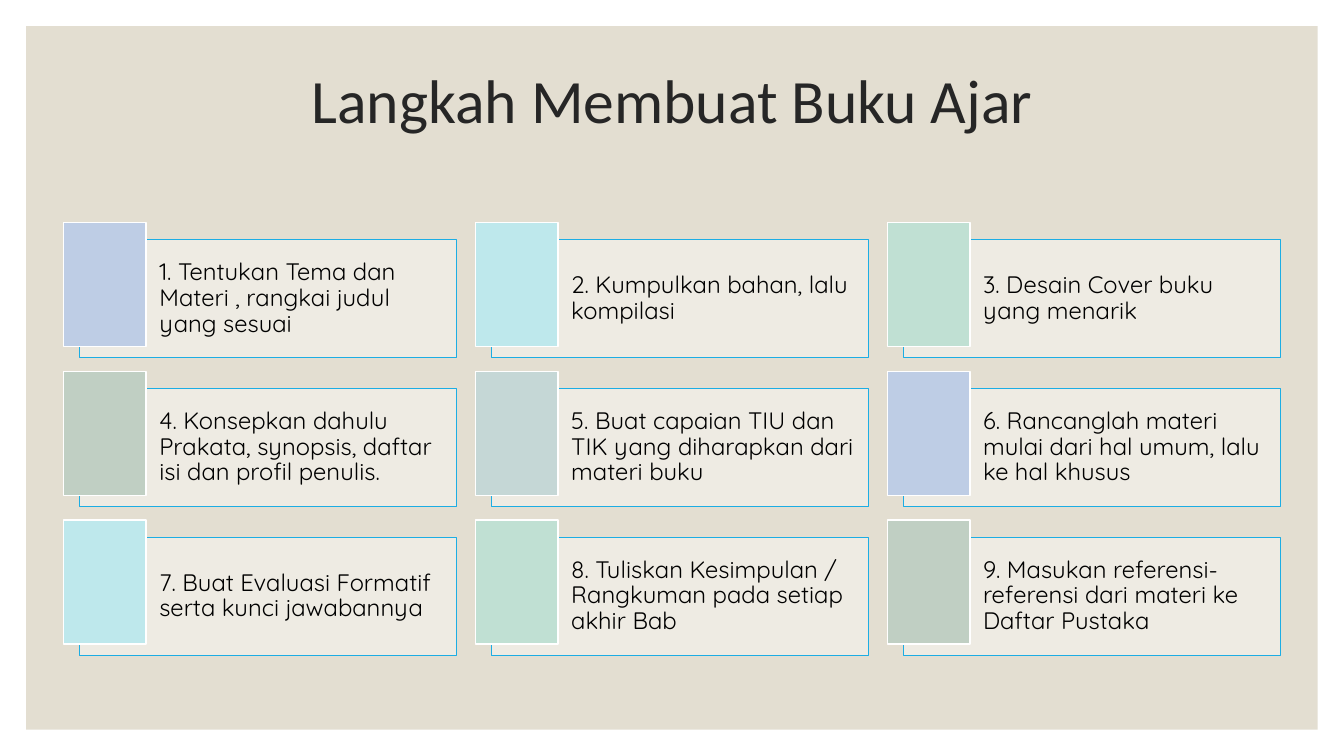
from lxml.etree import SubElement
from pptx import Presentation
from pptx.dml.color import RGBColor
from pptx.enum.shapes import MSO_SHAPE
from pptx.enum.text import MSO_ANCHOR, PP_ALIGN
from pptx.oxml.ns import qn
from pptx.util import Inches, Pt

TITLE = "Langkah Membuat Buku Ajar"
STEPS = [  # text, tile colour
    ("1. Tentukan Tema dan Materi , rangkai judul yang sesuai", "periwinkle"),
    ("2. Kumpulkan bahan, lalu kompilasi", "aqua"),
    ("3. Desain Cover buku yang menarik", "mint"),
    ("4. Konsepkan dahulu Prakata, synopsis, daftar isi dan profil penulis.", "sage"),
    ("5. Buat capaian TIU dan TIK yang diharapkan dari materi buku", "mist"),
    ("6. Rancanglah materi mulai dari hal umum, lalu ke hal khusus", "periwinkle"),
    ("7. Buat Evaluasi Formatif serta kunci jawabannya", "aqua"),
    ("8. Tuliskan Kesimpulan / Rangkuman pada setiap akhir Bab", "mint"),
    ("9. Masukan referensi-referensi dari materi ke Daftar Pustaka", "sage"),
]


class Theme:
    panel = "E3DED1"
    white = "FFFFFF"
    card_line = "1CADE4"
    title_color = "262626"
    body_color = "000000"
    tiles = {"periwinkle": "BECDE5", "aqua": "BEE8EC", "mint": "C0E0D3",
             "sage": "C0CFC3", "mist": "C5D7D6"}
    title_font, title_size = "Calibri", 44
    body_font, body_size = "Quicksand", 17
    card_opacity = 40


SLIDE_WIDTH, SLIDE_HEIGHT = 13.33, 7.5
MARGIN = 0.26
COLUMNS = ROWS = 3
FIRST_LEFT, LAST_LEFT = 0.63, 8.8
FIRST_TOP, LAST_TOP = 2.21, 5.16
TILE_WIDTH, TILE_HEIGHT = 0.82, 1.23
CARD_WIDTH, CARD_HEIGHT = 3.74, 1.17
CARD_SHIFT_X, CARD_SHIFT_Y = 0.16, 0.17
CARD_INSETS = (0.79, 0.07, 0.07, 0.07)


def add_box(slide, left, top, width, height, fill, line=None, line_width=1, opacity=100):
    shape = slide.shapes.add_shape(
        MSO_SHAPE.RECTANGLE, Inches(left), Inches(top), Inches(width), Inches(height))
    shape.shadow.inherit = False
    shape.fill.solid()
    shape.fill.fore_color.rgb = RGBColor.from_string(fill)
    if opacity < 100:
        color = shape.fill._xPr.find(f"{qn('a:solidFill')}/{qn('a:srgbClr')}")
        SubElement(color, qn("a:alpha"), val=str(opacity * 1000))
    if line:
        shape.line.color.rgb = RGBColor.from_string(line)
        shape.line.width = Pt(line_width)
    else:
        shape.line.fill.background()
    return shape


def write_text(shape, text, *, font, size, color, align=PP_ALIGN.LEFT,
               insets=(0.1, 0.05, 0.1, 0.05)):
    frame = shape.text_frame
    frame.word_wrap = True
    frame.vertical_anchor = MSO_ANCHOR.MIDDLE
    (frame.margin_left, frame.margin_top,
     frame.margin_right, frame.margin_bottom) = map(Inches, insets)
    paragraph = frame.paragraphs[0]
    paragraph.alignment = align
    paragraph.line_spacing = 0.9
    run = paragraph.add_run()
    run.text = text
    run.font.name = font
    run.font.size = Pt(size)
    run.font.color.rgb = RGBColor.from_string(color)


def add_step(slide, index, text, tile):
    row, column = divmod(index, COLUMNS)
    left = FIRST_LEFT + column * (LAST_LEFT - FIRST_LEFT) / (COLUMNS - 1)
    top = FIRST_TOP + row * (LAST_TOP - FIRST_TOP) / (ROWS - 1)
    card = add_box(slide, left + CARD_SHIFT_X, top + CARD_SHIFT_Y, CARD_WIDTH, CARD_HEIGHT,
                   Theme.white, Theme.card_line, 0.5, Theme.card_opacity)
    write_text(card, text, font=Theme.body_font, size=Theme.body_size,
               color=Theme.body_color, insets=CARD_INSETS)
    add_box(slide, left, top, TILE_WIDTH, TILE_HEIGHT, Theme.tiles[tile], Theme.white)


def main():
    presentation = Presentation()
    presentation.slide_width = Inches(SLIDE_WIDTH)
    presentation.slide_height = Inches(SLIDE_HEIGHT)
    slide = presentation.slides.add_slide(presentation.slide_layouts[6])
    add_box(slide, MARGIN, MARGIN, SLIDE_WIDTH - 2 * MARGIN, SLIDE_HEIGHT - 2 * MARGIN,
            Theme.panel)
    title = slide.shapes.add_textbox(Inches(1.17), Inches(0.28), Inches(11), Inches(1.5))
    write_text(title, TITLE, font=Theme.title_font, size=Theme.title_size,
               color=Theme.title_color, align=PP_ALIGN.CENTER)
    for index, (text, tile) in enumerate(STEPS):
        add_step(slide, index, text, tile)
    presentation.save("out.pptx")


if __name__ == "__main__":
    main()
